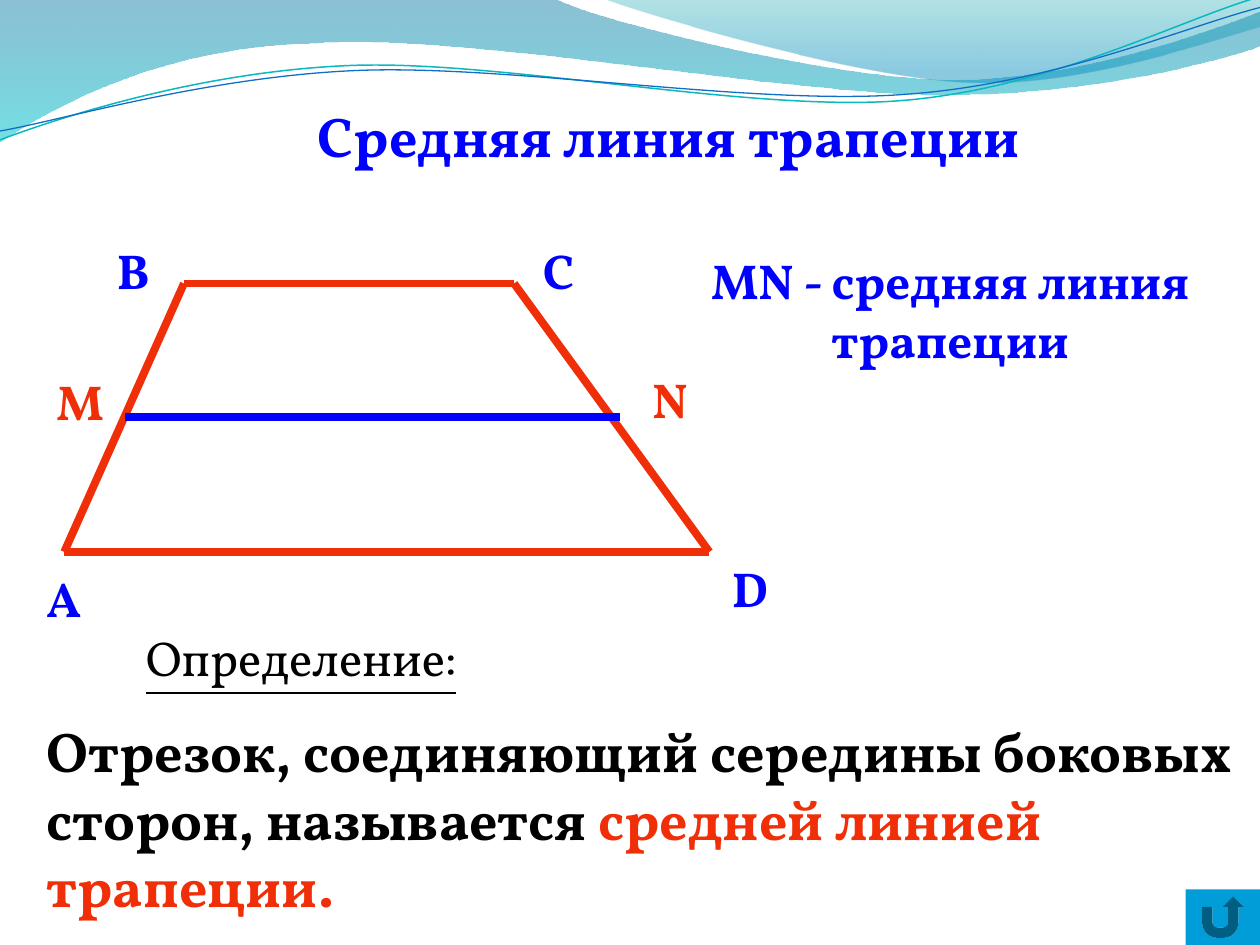
from dataclasses import dataclass
from math import cos, radians, sin

from lxml.etree import SubElement
from pptx import Presentation
from pptx.dml.color import RGBColor
from pptx.enum.shapes import MSO_CONNECTOR, MSO_SHAPE
from pptx.enum.text import MSO_AUTO_SIZE, PP_ALIGN
from pptx.oxml.ns import qn
from pptx.shapes.autoshape import Shape
from pptx.shapes.shapetree import SlideShapes
from pptx.util import Inches, Pt

BLUE = RGBColor(0x00, 0x00, 0xFF)
RED = RGBColor(0xF0, 0x2F, 0x08)
BLACK = RGBColor(0x00, 0x00, 0x00)
BUTTON_BLUE = RGBColor(0x00, 0x9D, 0xD9)
TEAL_LINE = RGBColor(0x0A, 0xB8, 0xBF)
BLUE_LINE = RGBColor(0x0F, 0x6F, 0xC6)
DEEP_BLUE = RGBColor(0x00, 0x74, 0xA1)
CYAN = RGBColor(0x00, 0xC6, 0xCF)
TEAL = RGBColor(0x00, 0xA1, 0xA9)
SKY = RGBColor(0x00, 0x8B, 0xBF)
FONT = "Vollkorn"
TILT = -2.7

Point = tuple[float, float]
Segment = tuple[Point, ...]


@dataclass(frozen=True)
class Stop:
    position: float
    color: RGBColor
    opacity: int


@dataclass(frozen=True)
class Wave:
    start: Point
    segments: tuple[Segment, ...]
    stops: tuple[Stop, Stop]


@dataclass(frozen=True)
class Strand:
    start: Point
    segments: tuple[Segment, ...]
    center: Point
    color: RGBColor
    weight: float


@dataclass(frozen=True)
class Side:
    start: Point
    end: Point
    color: RGBColor = RED


@dataclass(frozen=True)
class Caption:
    left: float
    top: float
    width: float
    height: float
    runs: tuple[tuple[str, RGBColor], ...]
    size: int = 28
    bold: bool = True
    underline: bool = False
    centered: bool = False
    wrap: bool = True


WAVES = (
    Wave((0, 0), (
        ((4.4, -0.01),),
        ((4.76, 0.17), (6.64, 0.63), (7.58, 0.63)),
        ((8.53, 0.63), (9.58, 0.26), (10, 0.09)),
        ((10.01, 0.36),),
        ((9.83, 0.44), (8.7, 0.76), (7.46, 0.75)),
        ((6.22, 0.75), (3.82, 0.28), (2.57, 0.34)),
        ((1.29, 0.36), (0.46, 0.83), (-0.01, 1.13)),
        ((0, 0),),
    ), (Stop(0, DEEP_BLUE, 45), Stop(1, CYAN, 55))),
    Wave((4.79, -0.01), (
        ((5.09, 0.11), (6.82, 0.62), (7.69, 0.65)),
        ((8.56, 0.69), (9.61, 0.32), (10, 0.21)),
        ((10, 0),),
        ((4.79, -0.01),),
    ), (Stop(0, TEAL, 30), Stop(0.8, SKY, 45))),
)

STRANDS = (
    Strand((0, 1.11), (
        ((0.48, 0.93), (1.58, 0.57), (2.77, 0.52)),
        ((3.95, 0.47), (5.93, 0.89), (7.13, 0.8)),
        ((8.33, 0.71), (9.38, 0.15), (9.98, -0.02)),
    ), (4.99, 0.58), TEAL_LINE, 0.85),
    Strand((0, 1.04), (
        ((0.47, 0.96), (1.64, 0.61), (2.83, 0.56)),
        ((4.03, 0.51), (5.97, 0.84), (7.17, 0.75)),
        ((8.36, 0.67), (9.41, 0.21), (10, 0.06)),
    ), (5, 0.59), BLUE_LINE, 0.75),
)

A, B, C, D = (0.51, 4.38), (1.46, 2.25), (4.08, 2.25), (5.63, 4.38)
M, N = (0.99, 3.31), (4.92, 3.31)
SIDES = (Side(B, C), Side(A, D), Side(B, A), Side(C, D), Side(M, N, BLUE))

CAPTIONS = (
    Caption(1.85, 0.76, 6.92, 0.63, (("Средняя линия трапеции", BLUE),), size=32, centered=True),
    Caption(1.06, 4.93, 4.67, 0.57, (("Определение:", BLACK),), bold=False, underline=True),
    Caption(0.27, 5.64, 9.73, 1.17, (
        ("Отрезок, соединяющий середины боковых сторон, называется ", BLACK),
        ("средней линией трапеции.", RED),
    ), size=32),
    Caption(0.27, 4.46, 0.47, 0.57, (("A", BLUE),)),
    Caption(0.83, 1.86, 0.63, 0.57, (("B", BLUE),)),
    Caption(4.21, 1.86, 1.19, 0.57, (("C", BLUE),)),
    Caption(5.71, 4.38, 0.63, 0.57, (("D", BLUE),)),
    Caption(0.35, 2.9, 0.57, 0.57, (("M", RED),), wrap=False),
    Caption(5.08, 2.88, 0.48, 0.57, (("N", RED),), wrap=False),
    Caption(5.08, 1.94, 4.92, 1.03, (("MN - средняя линия трапеции", BLUE),), centered=True),
)


def turn(point: Point, center: Point, degrees: float) -> Point:
    dx, dy = point[0] - center[0], point[1] - center[1]
    c, s = cos(radians(degrees)), sin(radians(degrees))
    return center[0] + dx * c - dy * s, center[1] + dx * s + dy * c


def draw_outline(shapes: SlideShapes, start: Point, segments: tuple[Segment, ...],
                 close: bool) -> Shape:
    vertices = [(Inches(x), Inches(y)) for x, y in (start, *(p for s in segments for p in s))]
    builder = shapes.build_freeform(*vertices[0])
    builder.add_line_segments(vertices[1:], close=close)
    curve = builder.convert_to_shape()
    curve.shadow.inherit = False
    steps = iter(list(curve.element.spPr.iter(qn("a:lnTo"))))
    for segment in segments:
        bend, *others = [next(steps) for _ in segment]
        if others:
            bend.tag = qn("a:cubicBezTo")
        for other in others:
            bend.append(other[0])
            other.getparent().remove(other)
    return curve


def draw_wave(shapes: SlideShapes, wave: Wave) -> None:
    surface = draw_outline(shapes, wave.start, wave.segments, close=True)
    surface.line.fill.background()
    surface.fill.gradient()
    surface.fill.gradient_angle = 270
    for target, stop in zip(surface.fill.gradient_stops, wave.stops):
        target.position = stop.position
        target.color.rgb = stop.color
    for color, stop in zip(surface.element.spPr.iter(qn("a:srgbClr")), wave.stops):
        SubElement(color, qn("a:alpha"), val=str(stop.opacity * 1000))


def draw_strand(shapes: SlideShapes, strand: Strand) -> None:
    start = turn(strand.start, strand.center, -TILT)
    segments = tuple(tuple(turn(p, strand.center, -TILT) for p in s) for s in strand.segments)
    thread = draw_outline(shapes, start, segments, close=False)
    thread.rotation = TILT
    thread.fill.background()
    thread.line.color.rgb = strand.color
    thread.line.width = Pt(strand.weight)


def draw_side(shapes: SlideShapes, side: Side) -> None:
    ends = (Inches(value) for value in side.start + side.end)
    edge = shapes.add_connector(MSO_CONNECTOR.STRAIGHT, *ends)
    edge.line.color.rgb = side.color
    edge.line.width = Pt(4.5)
    SubElement(edge.element.spPr, qn("a:effectLst"))


def draw_caption(shapes: SlideShapes, caption: Caption) -> None:
    frame = shapes.add_textbox(Inches(caption.left), Inches(caption.top),
                               Inches(caption.width), Inches(caption.height)).text_frame
    frame.word_wrap = caption.wrap
    frame.auto_size = MSO_AUTO_SIZE.SHAPE_TO_FIT_TEXT
    paragraph = frame.paragraphs[0]
    paragraph.alignment = PP_ALIGN.CENTER if caption.centered else PP_ALIGN.LEFT
    paragraph.font.name = FONT
    paragraph.font.size = Pt(caption.size)
    paragraph.font.bold = caption.bold
    paragraph.font.underline = caption.underline
    for words, color in caption.runs:
        run = paragraph.add_run()
        run.text = words
        run.font.color.rgb = color


def draw_return_button(shapes: SlideShapes) -> None:
    button = shapes.add_shape(MSO_SHAPE.ACTION_BUTTON_RETURN, Inches(9.41), Inches(7.06),
                              Inches(0.59), Inches(0.44))
    button.shadow.inherit = False
    button.fill.solid()
    button.fill.fore_color.rgb = BUTTON_BLUE
    button.line.fill.background()


def main() -> None:
    deck = Presentation()
    deck.slide_width, deck.slide_height = Inches(10), Inches(7.5)
    shapes = deck.slides.add_slide(deck.slide_layouts[6]).shapes
    for draw, parts in ((draw_wave, WAVES), (draw_strand, STRANDS),
                        (draw_side, SIDES), (draw_caption, CAPTIONS)):
        for part in parts:
            draw(shapes, part)
    draw_return_button(shapes)
    deck.save("out.pptx")


if __name__ == "__main__":
    main()
